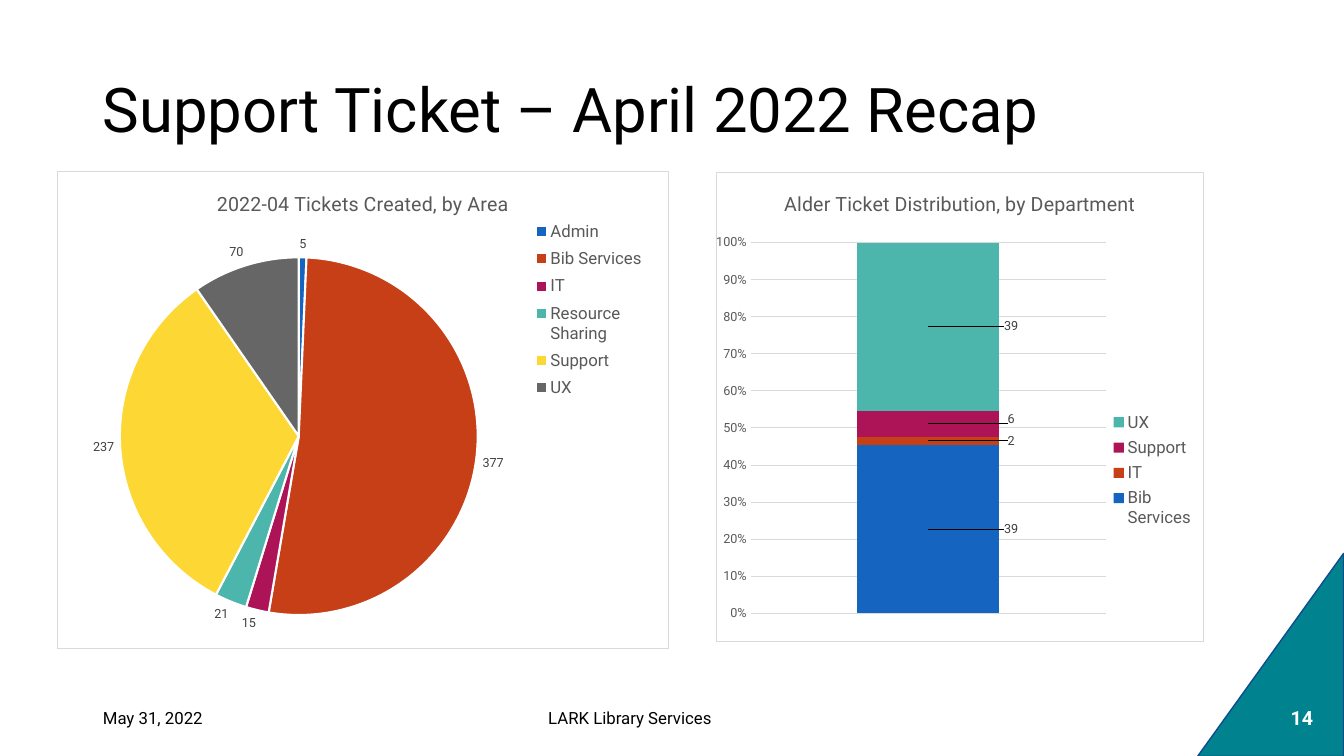
from lxml import etree
from pptx import Presentation
from pptx.chart.data import CategoryChartData
from pptx.dml.color import RGBColor
from pptx.enum.chart import XL_CHART_TYPE, XL_LABEL_POSITION, XL_LEGEND_POSITION, XL_TICK_MARK
from pptx.enum.shapes import MSO_SHAPE
from pptx.enum.text import MSO_ANCHOR, PP_ALIGN
from pptx.oxml import parse_xml
from pptx.oxml.ns import nsdecls, qn
from pptx.util import Emu, Pt

PIE, STACKED_100 = XL_CHART_TYPE.PIE, XL_CHART_TYPE.COLUMN_STACKED_100
OUTSIDE_END = XL_LABEL_POSITION.OUTSIDE_END
LEGEND_RIGHT, LEGEND_CORNER = XL_LEGEND_POSITION.RIGHT, XL_LEGEND_POSITION.CORNER
NO_TICK = XL_TICK_MARK.NONE
RIGHT_TRIANGLE = MSO_SHAPE.RIGHT_TRIANGLE
MIDDLE = MSO_ANCHOR.MIDDLE
LEFT, CENTER = PP_ALIGN.LEFT, PP_ALIGN.CENTER

FONT = "Roboto"
BLACK = RGBColor(0x00, 0x00, 0x00)
WHITE = RGBColor(0xFF, 0xFF, 0xFF)
DARK_GRAY = RGBColor(0x40, 0x40, 0x40)
GRAY = RGBColor(0x59, 0x59, 0x59)
LIGHT_GRAY = RGBColor(0xD9, 0xD9, 0xD9)
TEAL = RGBColor(0x00, 0x83, 0x8E)
NAVY = RGBColor(0x10, 0x4B, 0x8E)
PALETTE = [
    RGBColor(0x15, 0x65, 0xC0),
    RGBColor(0xC6, 0x3F, 0x17),
    RGBColor(0xAD, 0x14, 0x57),
    RGBColor(0x4D, 0xB6, 0xAC),
    RGBColor(0xFD, 0xD8, 0x35),
    RGBColor(0x66, 0x66, 0x66),
]

TICKETS_BY_AREA = {"Admin": 5, "Bib Services": 377, "IT": 15,
                   "Resource Sharing": 21, "Support": 237, "UX": 70}
TICKETS_BY_DEPARTMENT = {"Bib Services": 39, "IT": 2, "Support": 6, "UX": 39}
# Label shifts from the bar's middle, as shares of the chart's size
LABEL_SHIFTS = [(0.17, 0), (0.17, 0), (0.17, -0.01), (0.17, 0)]


def px(length):
    return Emu(round(length * 914400 / 100.8))


def style_font(font, size, color, bold=False):
    font.name = FONT
    font.size = Pt(size)
    font.bold = bold
    font.color.rgb = color


def add_text(page, text, left, top, width, height, *, size, color=BLACK,
             bold=False, align=LEFT, spacing=1.0):
    box = page.shapes.add_textbox(px(left), px(top), px(width), px(height))
    frame = box.text_frame
    frame.word_wrap = True
    frame.vertical_anchor = MIDDLE
    para = frame.paragraphs[0]
    para.alignment = align
    para.line_spacing = spacing
    span = para.add_run()
    span.text = text
    style_font(span.font, size, color, bold)


def add_corner(page):
    corner = page.shapes.add_shape(RIGHT_TRIANGLE, px(1169), px(582), px(203), px(146))
    corner.rotation = 90
    frame = corner._element.spPr.find(qn("a:xfrm"))
    frame.set("flipH", "1")
    frame.set("flipV", "1")
    corner.shadow.inherit = False
    corner.fill.solid()
    corner.fill.fore_color.rgb = TEAL
    corner.line.color.rgb = NAVY
    corner.line.width = Pt(1)


def make_layout(x, y, width=None, height=None, inner=False):
    """Manual layout in shares of the chart; without a size it is a shift."""
    layout = parse_xml(f"<c:layout {nsdecls('c')}><c:manualLayout/></c:layout>")
    settings = [("layoutTarget", "inner")] if inner else []
    if width is not None:
        settings += [("xMode", "edge"), ("yMode", "edge")]
    settings += [("x", x), ("y", y)]
    if width is not None:
        settings += [("w", width), ("h", height)]
    for tag, value in settings:
        etree.SubElement(layout[0], qn(f"c:{tag}")).set("val", str(value))
    return layout


def set_plot_layout(chart, *shares):
    area = chart._chartSpace.chart.plotArea
    for layout in area.findall(qn("c:layout")):
        area.remove(layout)
    area.insert(0, make_layout(*shares, inner=True))


def add_chart(page, kind, data, left, top, width, height, *, title, plot_layout,
              legend_position, legend_layout):
    chart = page.shapes.add_chart(kind, px(left), px(top), px(width), px(height), data).chart
    style_font(chart.font, 10, BLACK)

    # Title
    chart.has_title = True
    chart.chart_title.include_in_layout = False
    para = chart.chart_title.text_frame.paragraphs[0]
    span = para.add_run()
    span.text = title
    style_font(span.font, 14, GRAY)

    # Legend
    chart.has_legend = True
    chart.legend.position = legend_position
    chart.legend.include_in_layout = False
    style_font(chart.legend.font, 12, GRAY)
    legend = chart.legend._element
    for layout in legend.findall(qn("c:layout")):
        legend.remove(layout)
    legend.find(qn("c:legendPos")).addnext(make_layout(*legend_layout))

    # Plot area and frame
    set_plot_layout(chart, *plot_layout)
    chart._chartSpace.chart.addnext(parse_xml(
        f"<c:spPr {nsdecls('c', 'a')}>"
        f'<a:solidFill><a:srgbClr val="{WHITE}"/></a:solidFill>'
        f'<a:ln w="{Pt(0.75)}"><a:solidFill><a:srgbClr val="{LIGHT_GRAY}"/></a:solidFill></a:ln>'
        "</c:spPr>"))
    return chart


def add_area_pie(page):
    data = CategoryChartData()
    data.categories = list(TICKETS_BY_AREA)
    data.add_series("Series 1", list(TICKETS_BY_AREA.values()))
    chart = add_chart(page, PIE, data, 57, 171, 612, 478,
                      title="2022-04 Tickets Created, by Area",
                      plot_layout=(0.1, 0.18, 0.59, 0.75),
                      legend_position=LEGEND_RIGHT,
                      legend_layout=(0.77, 0.09, 0.2, 0.4))
    plot = chart.plots[0]
    plot.vary_by_categories = True
    for index, color in enumerate(PALETTE):
        slice_format = plot.series[0].points[index].format
        slice_format.fill.solid()
        slice_format.fill.fore_color.rgb = color
        slice_format.line.color.rgb = WHITE
        slice_format.line.width = Pt(1.5)
    labels = plot.series[0].data_labels
    labels.show_value = True
    labels.position = OUTSIDE_END
    style_font(labels.font, 9, DARK_GRAY)


def add_department_column(page):
    data = CategoryChartData()
    data.categories = ["1"]
    for department, count in TICKETS_BY_DEPARTMENT.items():
        data.add_series(department, [count])
    chart = add_chart(page, STACKED_100, data, 716, 172, 488, 470,
                      title="Alder Ticket Distribution, by Department",
                      plot_layout=(0.07, 0.15, 0.73, 0.79),
                      legend_position=LEGEND_CORNER,
                      legend_layout=(0.8, 0.5, 0.19, 0.27))
    plot = chart.plots[0]
    plot.vary_by_categories = False
    plot.gap_width = 150
    plot.overlap = 100
    for series, color, shift in zip(plot.series, PALETTE, LABEL_SHIFTS):
        series.format.fill.solid()
        series.format.fill.fore_color.rgb = color
        series.data_labels.show_value = True
        style_font(series.data_labels.font, 9, DARK_GRAY)
        style_font(series.points[0].data_label.font, 9, DARK_GRAY)
        label = series._element.find(".//" + qn("c:dLbl"))
        label.find(qn("c:idx")).addnext(make_layout(*shift))

    # Axes
    chart.category_axis.visible = False
    axis = chart.value_axis
    axis.major_tick_mark = NO_TICK
    axis.minor_tick_mark = NO_TICK
    axis.format.line.fill.background()
    axis.major_gridlines.format.line.color.rgb = LIGHT_GRAY
    axis.major_gridlines.format.line.width = Pt(0.75)
    axis.tick_labels.number_format = "0%"
    axis.tick_labels.number_format_is_linked = False
    style_font(axis.tick_labels.font, 9, GRAY)


def main():
    deck = Presentation()
    deck.slide_width, deck.slide_height = px(1344), px(756)
    page = deck.slides.add_slide(deck.slide_layouts[6])

    # Corner and title
    add_corner(page)
    add_text(page, "Support Ticket – April 2022 Recap", 93, 40, 1159, 146,
             size=44, spacing=0.9)

    # Footer
    add_text(page, "May 31, 2022", 93, 698, 302, 40, size=12)
    add_text(page, "LARK Library Services", 403, 698, 454, 40, size=12, align=CENTER)
    add_text(page, "14", 1273, 698, 58, 40, size=14, color=WHITE, bold=True, align=CENTER)

    # Charts
    add_area_pie(page)
    add_department_column(page)
    deck.save("out.pptx")


if __name__ == "__main__":
    main()
